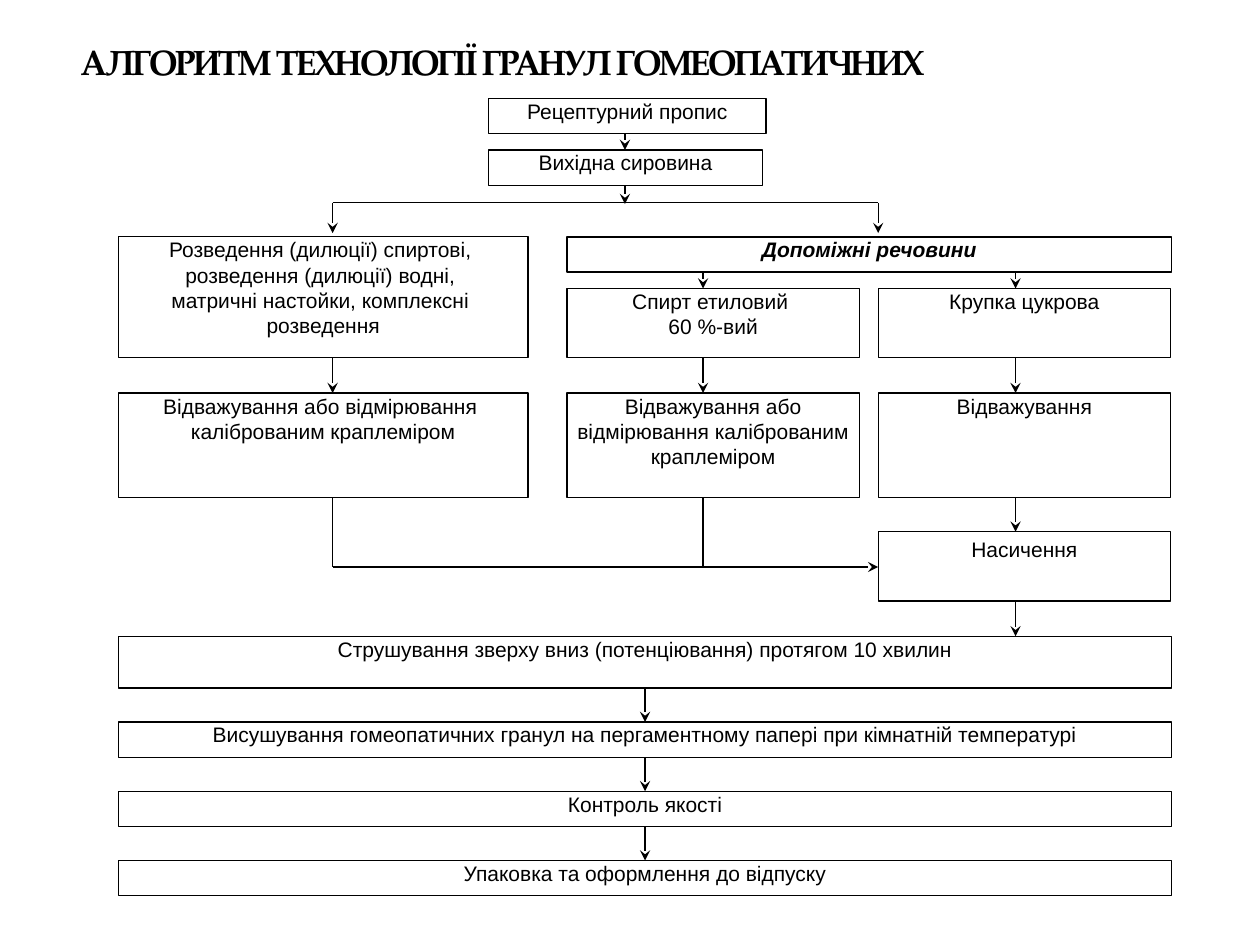
from lxml.etree import SubElement
from pptx import Presentation
from pptx.dml.color import RGBColor
from pptx.enum.shapes import MSO_CONNECTOR as CONNECTOR, MSO_SHAPE as SHAPE
from pptx.enum.text import MSO_ANCHOR as ANCHOR, PP_ALIGN as ALIGN
from pptx.oxml.ns import qn
from pptx.util import Inches, Pt

COLORS = {"ink": "000000", "paper": "FFFFFF"}
LEFT, FULL_WIDTH, ROW = 0.94, 8.36, 0.28
DILUTION_W, AID_W = 3.25, 2.32
ALCOHOL_X, SUGAR_X = 4.5, 6.97
DILUTION_AXIS, ALCOHOL_AXIS, SUGAR_AXIS = 2.64, 5.58, 8.06
START_AXIS, FINAL_AXIS = 4.96, 5.12
FORK_Y, MERGE_Y = 1.61, 4.5

STEPS = [
    (3.88, 0.78, 2.2, ROW, ["Рецептурний пропис"]),
    (3.88, 1.19, 2.17, ROW, ["Вихідна сировина"]),
    (LEFT, 1.88, DILUTION_W, 0.96, [
        "Розведення (дилюції) спиртові, \nрозведення (дилюції) водні, \n"
        "матричні настойки, комплексні \nрозведення"]),
    (ALCOHOL_X, 2.29, AID_W, 0.55, ["Спирт етиловий \n60 %-вий"]),
    (SUGAR_X, 2.29, AID_W, 0.55, ["Крупка цукрова"]),
    (LEFT, 3.12, DILUTION_W, 0.83,
     ["Відважування або відмірювання ", "каліброваним краплеміром"]),
    (ALCOHOL_X, 3.12, AID_W, 0.83,
     ["Відважування або відмірювання каліброваним краплеміром"]),
    (SUGAR_X, 3.12, AID_W, 0.83, ["Відважування"]),
    (LEFT, 5.05, FULL_WIDTH, 0.41,
     ["Струшування зверху вниз (потенціювання) протягом 10 хвилин"]),
    (LEFT, 5.73, FULL_WIDTH, ROW,
     ["Висушування гомеопатичних гранул на пергаментному папері при кімнатній температурі"]),
    (LEFT, 6.28, FULL_WIDTH, ROW, ["Контроль якості"]),
    (LEFT, 6.83, FULL_WIDTH, ROW, ["Упаковка та оформлення до відпуску"]),
]

DOWN_ARROWS = [
    (START_AXIS, 1.06, 1.19), (START_AXIS, 1.47, 1.62),
    (DILUTION_AXIS, FORK_Y, 1.85), (SUGAR_X, FORK_Y, 1.85),
    (ALCOHOL_AXIS, 2.16, 2.29), (SUGAR_AXIS, 2.16, 2.29),
    (DILUTION_AXIS, 2.84, 3.12), (ALCOHOL_AXIS, 2.84, 3.12),
    (SUGAR_AXIS, 2.84, 3.12), (SUGAR_AXIS, 3.95, 4.22), (SUGAR_AXIS, 4.77, 5.05),
    (FINAL_AXIS, 5.46, 5.73), (FINAL_AXIS, 6.01, 6.28), (FINAL_AXIS, 6.56, 6.83),
]


def color(name):
    """Return the named colour."""
    return RGBColor.from_string(COLORS[name])


def style_font(font, face, size, bold=False, italic=False):
    """Set face, size, weight and ink colour of a font."""
    font.name, font.size = face, Pt(size)
    font.bold, font.italic = bold, italic
    font.color.rgb = color("ink")


def add_title(slide, title):
    """Add the tightly spaced heading."""
    box = slide.shapes.add_textbox(Inches(0.55), Inches(0.08), Inches(9), Inches(0.62))
    frame = box.text_frame
    frame.word_wrap = True
    frame.vertical_anchor = ANCHOR.BOTTOM
    heading = frame.paragraphs[0]
    heading.text = title
    style_font(heading.font, "TeX Gyre Pagella", 20, bold=True)
    heading.runs[0].font._element.set("spc", "-100")


def add_step(slide, left, top, width, height, paragraphs, emphasis=False, inset=0, pad=0):
    """Add an outlined box with centred text at its top."""
    step = slide.shapes.add_shape(
        SHAPE.RECTANGLE, Inches(left), Inches(top), Inches(width), Inches(height))
    step.shadow.inherit = False
    step.fill.solid()
    step.fill.fore_color.rgb = color("paper")
    step.line.color.rgb = color("ink")
    step.line.width = Pt(0.75)
    frame = step.text_frame
    frame.word_wrap = True
    frame.vertical_anchor = ANCHOR.TOP
    frame.margin_left = frame.margin_right = Inches(inset)
    frame.margin_top, frame.margin_bottom = Inches(pad), 0
    for index, wording in enumerate(paragraphs):
        paragraph = frame.add_paragraph() if index else frame.paragraphs[0]
        paragraph.text = wording
        paragraph.alignment = ALIGN.CENTER
        style_font(paragraph.font, "Arial", 12, bold=emphasis, italic=emphasis)


def add_line(slide, x1, y1, x2, y2, arrow=False):
    """Add a thin line, with a stealth arrowhead at its end on request."""
    link = slide.shapes.add_connector(
        CONNECTOR.STRAIGHT, Inches(x1), Inches(y1), Inches(x2), Inches(y2))
    link.line.color.rgb = color("ink")
    link.line.width = Pt(0.75)
    if arrow:
        SubElement(link.line._ln, qn("a:tailEnd"), type="stealth")
    SubElement(link._element.spPr, qn("a:effectLst"))


def main():
    """Build the flow chart and save it."""
    deck = Presentation()
    deck.slide_width, deck.slide_height = Inches(10), Inches(7.5)
    slide = deck.slides.add_slide(deck.slide_layouts[6])
    add_title(slide, "АЛГОРИТМ ТЕХНОЛОГІЇ ГРАНУЛ ГОМЕОПАТИЧНИХ")
    for step in STEPS:
        add_step(slide, *step)
    add_step(slide, ALCOHOL_X, 1.88, 4.8, ROW, ["Допоміжні речовини"],
             emphasis=True, inset=0.1)
    add_step(slide, SUGAR_X, 4.22, AID_W, 0.55, ["Насичення"], pad=0.04)
    for axis, start, end in DOWN_ARROWS:
        add_line(slide, axis, start, axis, end, arrow=True)
    add_line(slide, DILUTION_AXIS, FORK_Y, SUGAR_X, FORK_Y)
    for axis in (DILUTION_AXIS, ALCOHOL_AXIS):
        add_line(slide, axis, 3.95, axis, MERGE_Y)
    add_line(slide, DILUTION_AXIS, MERGE_Y, SUGAR_X, MERGE_Y, arrow=True)
    deck.save("out.pptx")


if __name__ == "__main__":
    main()
